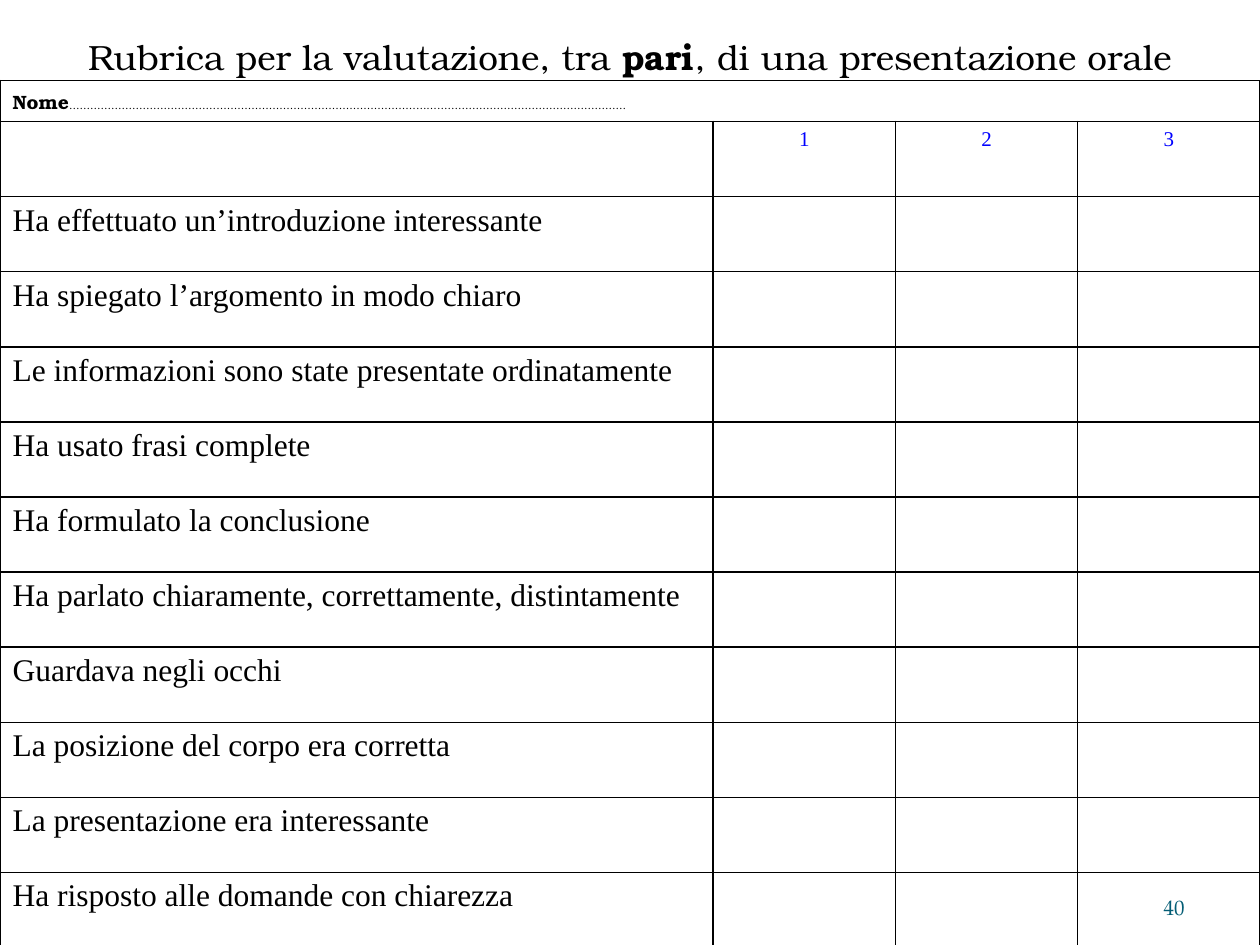
from lxml.etree import SubElement
from pptx import Presentation
from pptx.dml.color import RGBColor
from pptx.enum.text import MSO_ANCHOR, PP_ALIGN
from pptx.oxml.ns import qn
from pptx.util import Inches, Pt

BLACK = RGBColor(0x00, 0x00, 0x00)
BLUE = RGBColor(0x00, 0x00, 0xFF)
TEAL = RGBColor(0x04, 0x5D, 0x75)
TITLE_FONT = "TeX Gyre Bonum"
NUMBER_FONT = "TeX Gyre Pagella"
TABLE_FONT = "Times New Roman"

TITLE = [
    ("Rubrica per la valutazione, tra ", 20, False),
    ("pari", 20, True),
    (", di una presentazione orale", 20, False),
]
NAME_LINE = [
    ("Nome", 11, True),
    ("……………………………………………………………………………………………………………………………………………", 6, False),
]
SCORES = ["1", "2", "3"]
CRITERIA = [
    "Ha effettuato un’introduzione interessante",
    "Ha spiegato l’argomento in modo chiaro",
    "Le informazioni sono state presentate ordinatamente",
    "Ha usato frasi complete",
    "Ha formulato la conclusione",
    "Ha parlato chiaramente, correttamente, distintamente",
    "Guardava negli occhi",
    "La posizione del corpo era corretta",
    "La presentazione era interessante",
    "Ha risposto alle domande con chiarezza",
]
PAGE_NUMBER = "40"

WIDTH, HEIGHT = Inches(10), Inches(7.5)
TABLE_TOP = Inches(0.64)
NAME_HEIGHT = Inches(0.3)
CRITERIA_WIDTH = Inches(5.66)


def format_run(run, font, size, color, bold=False):
    run.font.name = font
    run.font.size = Pt(size)
    run.font.color.rgb = color
    run.font.bold = bold


def add_runs(paragraph, parts):
    for text, size, bold in parts:
        run = paragraph.add_run()
        run.text = text
        format_run(run, TITLE_FONT, size, BLACK, bold)


def write(text_frame, text, font, size, color, alignment):
    text_frame.text = text
    paragraph = text_frame.paragraphs[0]
    paragraph.alignment = alignment
    format_run(paragraph.runs[0], font, size, color)


def style_cell(cell):
    """Give the cell thin black borders and no fill."""
    properties = cell._tc.get_or_add_tcPr()
    for side in ("a:lnL", "a:lnR", "a:lnT", "a:lnB"):
        line = SubElement(properties, qn(side), w=str(Pt(1)))
        fill = SubElement(line, qn("a:solidFill"))
        SubElement(fill, qn("a:srgbClr"), val=str(BLACK))
    cell.fill.background()


def add_title(slide):
    title = slide.shapes.title
    title.left, title.top = Inches(0.59), Inches(0.23)
    title.width, title.height = Inches(8.82), Inches(0.43)
    frame = title.text_frame
    frame.word_wrap = False
    frame.vertical_anchor = MSO_ANCHOR.MIDDLE
    frame.paragraphs[0].alignment = PP_ALIGN.CENTER
    add_runs(frame.paragraphs[0], TITLE)


def add_rubric(slide):
    row_count, column_count = len(CRITERIA) + 2, len(SCORES) + 1
    table_height = HEIGHT - TABLE_TOP
    table = slide.shapes.add_table(
        row_count, column_count, 0, TABLE_TOP, WIDTH, table_height).table
    table.first_row = table.horz_banding = False

    for index, column in enumerate(table.columns):
        column.width = (WIDTH - CRITERIA_WIDTH) // len(SCORES) if index else CRITERIA_WIDTH
    for index, row in enumerate(table.rows):
        row.height = (table_height - NAME_HEIGHT) // (row_count - 1) if index else NAME_HEIGHT
    for cell in table.iter_cells():
        style_cell(cell)

    table.cell(0, 0).merge(table.cell(0, column_count - 1))
    add_runs(table.cell(0, 0).text_frame.paragraphs[0], NAME_LINE)
    for column, score in enumerate(SCORES, start=1):
        write(table.cell(1, column).text_frame, score, TABLE_FONT, 12, BLUE, PP_ALIGN.CENTER)
    for row, criterion in enumerate(CRITERIA, start=2):
        write(table.cell(row, 0).text_frame, criterion, TABLE_FONT, 18, BLACK, PP_ALIGN.LEFT)


def add_page_number(slide):
    box = slide.shapes.add_textbox(Inches(8.67), Inches(6.95), Inches(0.83), Inches(0.4))
    box.text_frame.word_wrap = True
    box.text_frame.vertical_anchor = MSO_ANCHOR.BOTTOM
    write(box.text_frame, PAGE_NUMBER, NUMBER_FONT, 12, TEAL, PP_ALIGN.RIGHT)


def main():
    presentation = Presentation()
    presentation.slide_width, presentation.slide_height = WIDTH, HEIGHT
    slide = presentation.slides.add_slide(presentation.slide_layouts.get_by_name("Title Only"))
    add_title(slide)
    add_rubric(slide)
    add_page_number(slide)
    presentation.save("out.pptx")


if __name__ == "__main__":
    main()
